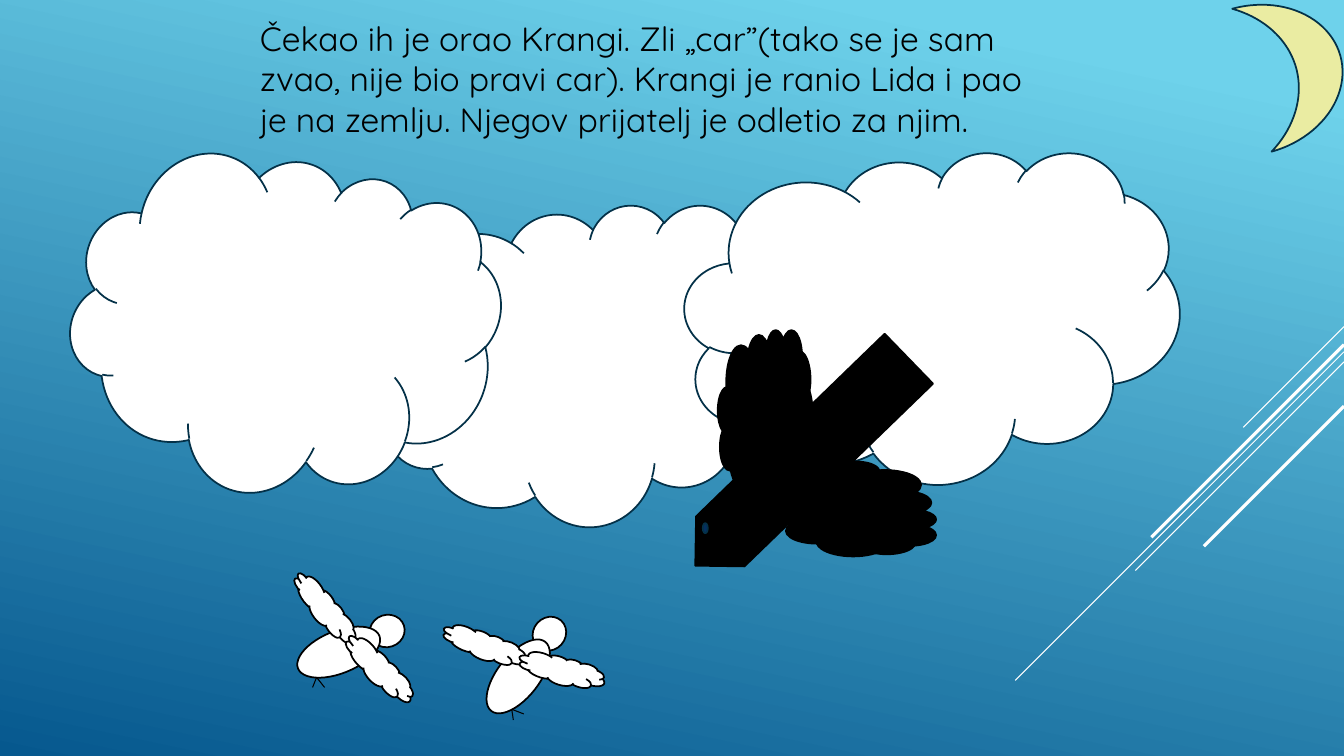
from dataclasses import dataclass
from math import cos, radians, sin

from pptx import Presentation
from pptx.dml.color import RGBColor
from pptx.enum.shapes import MSO_CONNECTOR, MSO_SHAPE
from pptx.enum.text import MSO_AUTO_SIZE
from pptx.oxml import parse_xml
from pptx.oxml.ns import nsdecls
from pptx.shapes.shapetree import GroupShapes, SlideShapes
from pptx.slide import Slide
from pptx.util import Emu, Pt

PX = 9144  # 100 px to the inch
Shapes = SlideShapes | GroupShapes


@dataclass(frozen=True)
class Theme:
    sky_top: str = "6ED2EB"
    sky_bottom: str = "06588E"
    white: str = "FFFFFF"
    black: str = "000000"
    outline: str = "043148"
    moon: str = "EAECA2"
    eye: str = "052F61"
    font: str = "Quicksand"
    story_size: int = 24
    outline_width: float = 1.25
    thin: float = 0.75
    thick: float = 2.25


THEME = Theme()


@dataclass(frozen=True)
class Part:
    """A preset shape; x and y are its left and top."""
    kind: MSO_SHAPE
    x: float
    y: float
    w: int
    h: int
    fill: str
    line: str
    turn: float = 0


@dataclass(frozen=True)
class Streak:
    """A 45° line running down and left from the right edge."""
    y: int
    reach: int
    weight: float


@dataclass(frozen=True)
class Limb:
    """A part of a bird, its middle measured from the body's middle."""
    kind: MSO_SHAPE
    dx: int
    dy: int
    w: int
    h: int
    turn: float


@dataclass(frozen=True)
class Bird:
    x: int
    y: int
    turn: float


WIDTH, HEIGHT = 1333, 750
STORY = ("Čekao ih je orao Krangi. Zli „car”(tako se je sam zvao, nije bio pravi car). "
         "Krangi je ranio Lida i pao je na zemlju. Njegov prijatelj je odletio za njim.")

STREAKS = [
    Streak(324, 100, THEME.thin),
    Streak(349, 326, THEME.thin),
    Streak(359, 207, THEME.thin),
    Streak(342, 191, THEME.thick),
    Streak(403, 139, THEME.thick),
]
SKY = [
    Part(MSO_SHAPE.CLOUD, 373, 203, 414, 319, THEME.white, THEME.outline),
    Part(MSO_SHAPE.CLOUD, 73, 153, 417, 340, THEME.white, THEME.outline, 20.1),
    Part(MSO_SHAPE.CLOUD, 679, 151, 491, 329, THEME.white, THEME.outline),
    Part(MSO_SHAPE.MOON, 1240, -6, 91, 147, THEME.moon, THEME.outline, 164.6),
]
EAGLE = [
    Part(MSO_SHAPE.PENTAGON, 648, 424, 295, 69, THEME.black, THEME.black, 135.9),
    Part(MSO_SHAPE.CLOUD, 712, 327, 94, 170, THEME.black, THEME.black),
    Part(MSO_SHAPE.CLOUD, 797, 420, 94, 170, THEME.black, THEME.black, 90),
    Part(MSO_SHAPE.OVAL, 697, 519, 5, 10, THEME.eye, THEME.outline),
]
LIMBS = [
    Limb(MSO_SHAPE.OVAL, 48, -21, 35, 32, 341.5),  # head
    Limb(MSO_SHAPE.OVAL, 0, 0, 87, 42, 338.1),  # body
    Limb(MSO_SHAPE.CLOUD, -14, -43, 87, 27, 52.4),  # far wing
    Limb(MSO_SHAPE.CLOUD, 40, 17, 88, 28, 47),  # near wing
]
HIP = (-22, 25)
TOES = [(-26, 35), (-14, 35)]
BIRDS = [Bird(336, 647, 0), Bird(514, 671, -30.2)]


def px(value: float) -> Emu:
    return Emu(round(value * PX))


def draw_part(shapes: Shapes, part: Part) -> None:
    s = shapes.add_shape(part.kind, px(part.x), px(part.y), px(part.w), px(part.h))
    s.rotation = part.turn
    s.shadow.inherit = False
    s.fill.solid()
    s.fill.fore_color.rgb = RGBColor.from_string(part.fill)
    s.line.color.rgb = RGBColor.from_string(part.line)
    s.line.width = Pt(THEME.outline_width)


def draw_line(shapes: Shapes, start: tuple[float, float], end: tuple[float, float],
              color: str, weight: float) -> None:
    line = shapes.add_connector(MSO_CONNECTOR.STRAIGHT, px(start[0]), px(start[1]),
                                px(end[0]), px(end[1]))
    line.line.color.rgb = RGBColor.from_string(color)
    line.line.width = Pt(weight)
    line._element.spPr.append(parse_xml(f"<a:effectLst {nsdecls('a')}/>"))


def draw_bird(shapes: Shapes, bird: Bird) -> None:
    c, n = cos(radians(bird.turn)), sin(radians(bird.turn))

    def place(dx: float, dy: float) -> tuple[float, float]:
        return bird.x + dx * c - dy * n, bird.y + dx * n + dy * c

    for limb in LIMBS:
        x, y = place(limb.dx, limb.dy)
        draw_part(shapes, Part(limb.kind, x - limb.w / 2, y - limb.h / 2, limb.w, limb.h,
                               THEME.white, THEME.black, (limb.turn + bird.turn) % 360))
    for toe in TOES:
        draw_line(shapes, place(*HIP), place(*toe), THEME.black, THEME.thin)


def paint_background(slide: Slide) -> None:
    fill = slide.background.fill
    fill.gradient()
    fill.gradient_angle = 258
    stops = ((0.1, THEME.sky_top), (1.0, THEME.sky_bottom))
    for stop, (position, color) in zip(fill.gradient_stops, stops):
        stop.position = position
        stop.color.rgb = RGBColor.from_string(color)


def write_story(shapes: Shapes) -> None:
    s = shapes.add_textbox(px(248), px(13), px(779), px(172))
    tf = s.text_frame
    tf.word_wrap = True
    tf.auto_size = MSO_AUTO_SIZE.SHAPE_TO_FIT_TEXT
    tf.text = STORY
    r = tf.paragraphs[0].runs[0]
    r.font.name = THEME.font
    r.font.size = Pt(THEME.story_size)
    r.font.color.rgb = RGBColor.from_string(THEME.black)


def main() -> None:
    prs = Presentation()
    prs.slide_width, prs.slide_height = px(WIDTH), px(HEIGHT)
    slide = prs.slides.add_slide(prs.slide_layouts[6])
    paint_background(slide)

    # Light streaks at the right edge
    streaks = slide.shapes.add_group_shape().shapes
    for streak in STREAKS:
        draw_line(streaks, (WIDTH, streak.y), (WIDTH - streak.reach, streak.y + streak.reach),
                  THEME.white, streak.weight)

    # Clouds and moon
    for part in SKY:
        draw_part(slide.shapes, part)

    # Story and the two birds
    write_story(slide.shapes)
    for bird in BIRDS:
        draw_bird(slide.shapes.add_group_shape().shapes, bird)

    # Eagle
    eagle = slide.shapes.add_group_shape().shapes
    for part in EAGLE:
        draw_part(eagle, part)

    prs.save("out.pptx")


if __name__ == "__main__":
    main()
